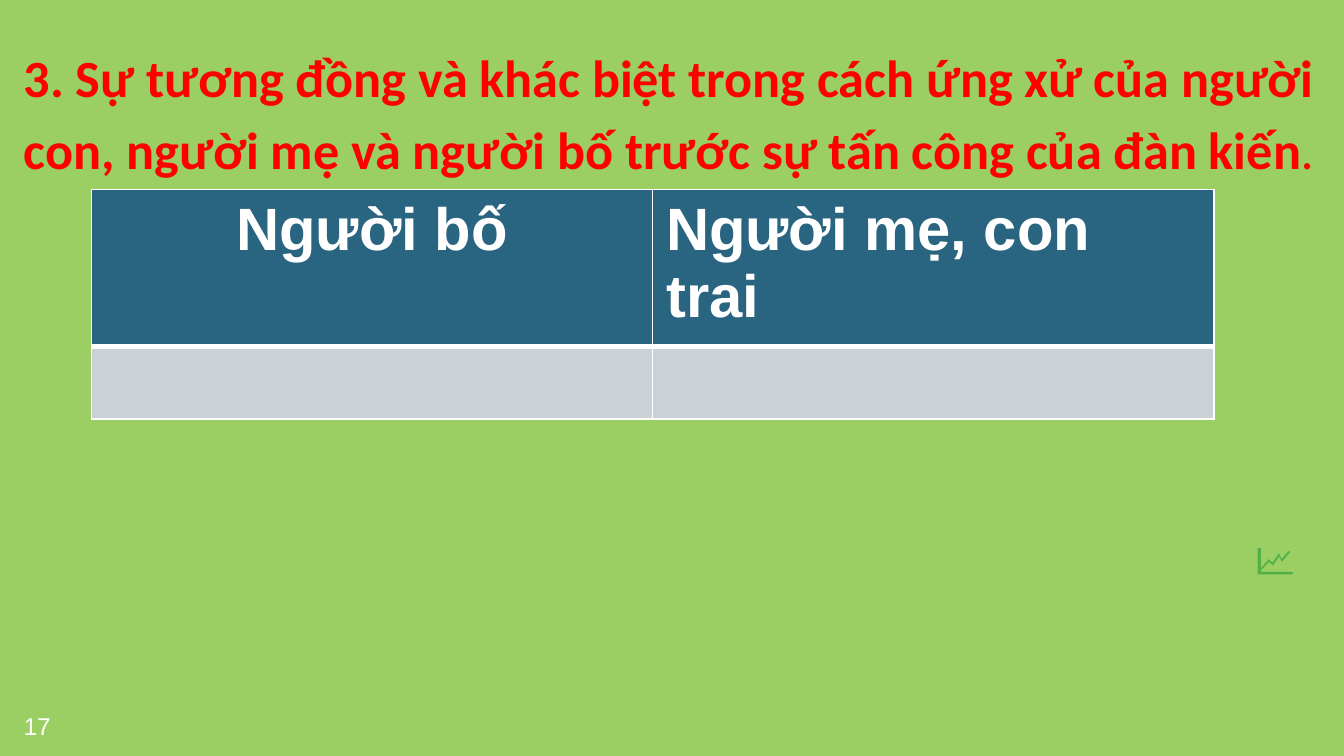
"""Build a slide comparing how the father and the mother and son respond."""
from pptx import Presentation
from pptx.dml.color import RGBColor
from pptx.enum.text import MSO_ANCHOR as Anchor, PP_ALIGN as Align
from pptx.oxml.ns import qn
from pptx.util import Cm, Pt
from lxml.etree import SubElement

GREEN, RED, WHITE = "9BCF63", "FF0000", "FFFFFF"
HEADER_FILL, BODY_FILL, ICON_FILL = "296480", "CBD2D7", "51B148"
TITLE = [
    ("3. Sự tương đồng và khác biệt trong cách ứng xử của người con, "
     "người mẹ và người bố trước sự tấn công của đàn kiến", True),
    (".", False),
]
NUMBER = [("17", False)]
HEADERS = [("Người bố", Align.CENTER), ("Người mẹ, con trai", Align.LEFT)]
ROW_HEIGHTS = [2.16, 1.37]
AXES = [(23.77, 10.36), (23.83, 10.36), (23.83, 10.81), (24.43, 10.81),
        (24.43, 10.86), (23.77, 10.86)]
TREND = [(23.83, 10.74), (23.98, 10.57), (24.05, 10.64), (24.17, 10.46),
         (24.22, 10.57), (24.36, 10.41), (24.38, 10.44), (24.23, 10.62),
         (24.17, 10.52), (24.06, 10.69), (23.98, 10.62), (23.85, 10.77)]


def color(value):
    return RGBColor.from_string(value)


def paint(target, value):
    target.fill.solid()
    target.fill.fore_color.rgb = color(value)


def add_span(para, text, font, size, value, bold):
    span = para.add_run()
    span.text = text
    span.font.name, span.font.size, span.font.bold = font, Pt(size), bold
    span.font.color.rgb = color(value)


def add_text(page, place, spans, font, size, value, anchor):
    box = page.shapes.add_textbox(*(Cm(length) for length in place))
    frame = box.text_frame
    frame.word_wrap = True
    frame.vertical_anchor = anchor
    frame.margin_left = frame.margin_right = Cm(0.25)
    frame.margin_top = frame.margin_bottom = Cm(0.25)
    para = frame.paragraphs[0]
    for text, bold in spans:
        add_span(para, text, font, size, value, bold)
    return para


def add_border(cell, side, width):
    line = SubElement(cell._tc.get_or_add_tcPr(), qn(f"a:{side}"), w=str(Pt(width)))
    fill = SubElement(line, qn("a:solidFill"))
    SubElement(fill, qn("a:srgbClr"), val=WHITE)


def add_comparison(page):
    table = page.shapes.add_table(
        len(ROW_HEIGHTS), len(HEADERS), Cm(1.73), Cm(3.58), Cm(21.21), Cm(sum(ROW_HEIGHTS))).table
    for row, height in enumerate(ROW_HEIGHTS):
        table.rows[row].height = Cm(height)
        for column, (text, align) in enumerate(HEADERS):
            cell = table.cell(row, column)
            widths = {"lnL": 1, "lnR": 1, "lnT": 3 if row else 1, "lnB": 1 if row else 3}
            for side, width in widths.items():
                add_border(cell, side, width)
            paint(cell, BODY_FILL if row else HEADER_FILL)
            if row == 0:
                para = cell.text_frame.paragraphs[0]
                para.alignment = align
                add_span(para, text, "Arial", 32, WHITE, True)


def add_chart_icon(page):
    icon = page.shapes.add_group_shape()
    for outline in (AXES, TREND):
        start, *rest = [(round(x * 100), round(y * 100)) for x, y in outline]
        builder = icon.shapes.build_freeform(*start, scale=Cm(0.01))
        builder.add_line_segments(rest, close=True)
        shape = builder.convert_to_shape()
        shape.shadow.inherit = False
        paint(shape, ICON_FILL)
        shape.line.fill.background()


def main():
    deck = Presentation()
    deck.slide_width, deck.slide_height = Cm(25.4), Cm(14.29)
    page = deck.slides.add_slide(deck.slide_layouts[6])
    paint(page.background, GREEN)
    title = add_text(page, (0.2, 0.43, 25.15, 3.2), TITLE, "Calibri", 28, RED, Anchor.TOP)
    title.line_spacing = 1.15
    add_text(page, (0.2, 13.18, 1.52, 1.09), NUMBER, "Arial", 13, WHITE, Anchor.MIDDLE)
    add_chart_icon(page)
    add_comparison(page)
    deck.save("out.pptx")


if __name__ == "__main__":
    main()
